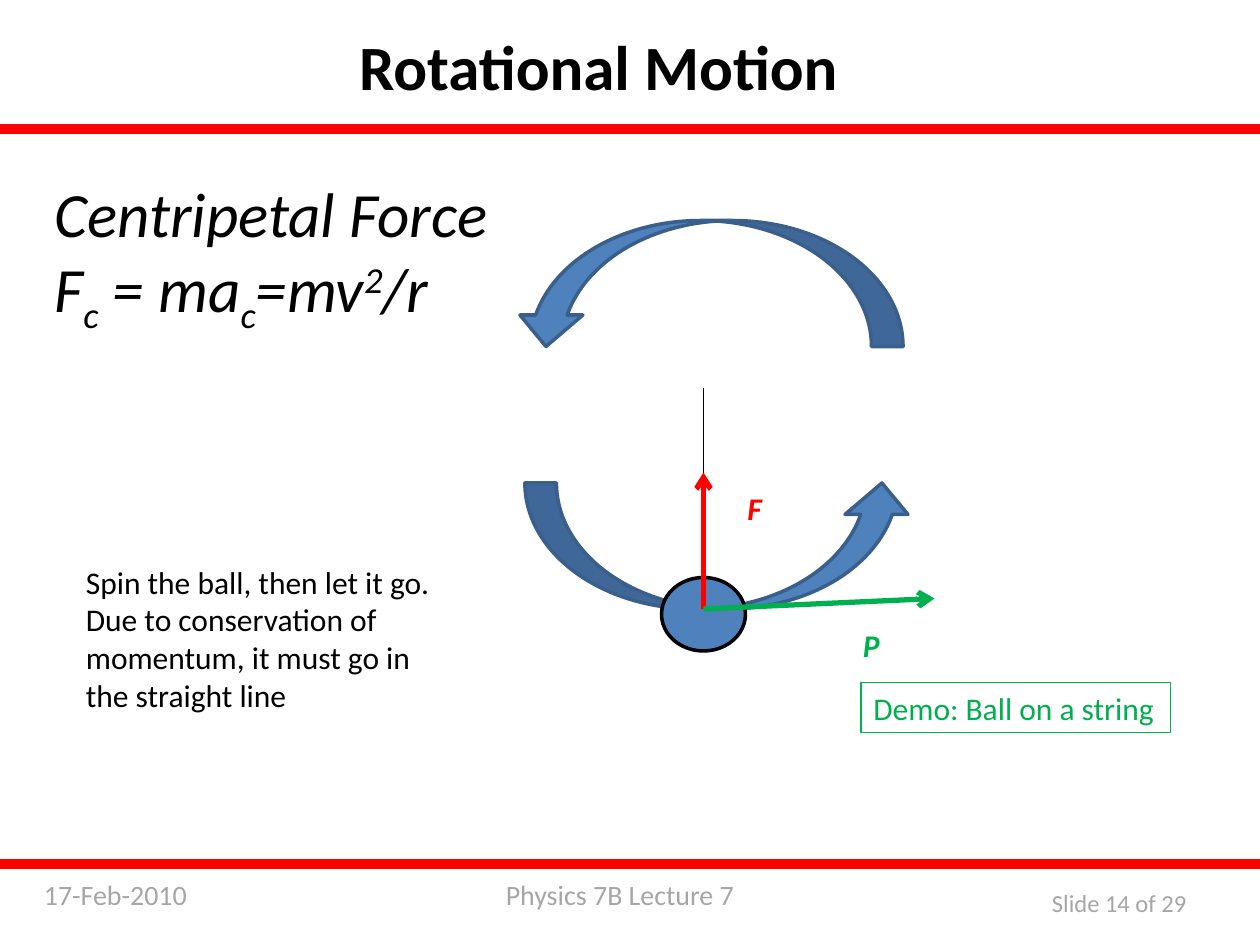
from lxml.etree import SubElement
from pptx import Presentation
from pptx.dml.color import RGBColor
from pptx.enum.shapes import MSO_CONNECTOR as Link, MSO_SHAPE as Shape
from pptx.enum.text import MSO_ANCHOR as Anchor, MSO_AUTO_SIZE as Fit, PP_ALIGN as Align
from pptx.oxml.ns import qn
from pptx.util import Pt

EMU_PER_PX = 7620
COLORS = {
    "black": "000000",
    "red": "FF0000",
    "green": "00B050",
    "blue": "4F81BD",
    "navy": "3A5F8C",
    "grey": "A6A6A6",
}
SUBSCRIPT, NORMAL, SUPERSCRIPT = -25000, 0, 30000
FORMULA = [
    ("F", NORMAL), ("c", SUBSCRIPT), (" = ma", NORMAL), ("c", SUBSCRIPT),
    ("=mv", NORMAL), ("2", SUPERSCRIPT), ("/r", NORMAL),
]


def px(*lengths):
    return [length * EMU_PER_PX for length in lengths]


def rgb(color):
    return RGBColor.from_string(COLORS[color])


def apply(target, values):
    for name, value in values.items():
        setattr(target, name, value)


def style_line(line, color, width):
    line.color.rgb = rgb(color)
    line.width = Pt(width)


def write(frame, paragraphs, size, color, wrap=False, align=Align.LEFT, **styles):
    apply(frame, {"word_wrap": wrap, "auto_size": Fit.NONE, "vertical_anchor": Anchor.TOP})
    for index, pieces in enumerate(paragraphs):
        paragraph = frame.add_paragraph() if index else frame.paragraphs[0]
        paragraph.alignment = align
        for text, baseline in pieces:
            run = paragraph.add_run()
            run.text = text
            apply(run.font, {"name": "Calibri", "size": Pt(size), **styles})
            run.font.color.rgb = rgb(color)
            if baseline:
                run._r.get_or_add_rPr().set("baseline", str(baseline))


def add_text(slide, box, text, size, color, **styles):
    label = slide.shapes.add_textbox(*px(*box))
    write(label.text_frame, [[(text, NORMAL)]], size, color, **styles)
    return label


def add_title(slide, box, text):
    title = slide.shapes.title
    apply(title, dict(zip(("left", "top", "width", "height"), px(*box))))
    write(title.text_frame, [[(text, NORMAL)]], 36, "black", align=Align.CENTER, bold=True)


def add_figure(slide, kind, box, fill, outline, rotation=0):
    figure = slide.shapes.add_shape(kind, *px(*box))
    figure.shadow.inherit = False
    figure.rotation = rotation
    figure.fill.solid()
    figure.fill.fore_color.rgb = rgb(fill)
    style_line(figure.line, outline, 2)
    return figure


def add_line(slide, ends, color, width, arrow=False):
    connector = slide.shapes.add_connector(Link.STRAIGHT, *px(*ends))
    style_line(connector.line, color, width)
    if arrow:
        SubElement(connector.line._get_or_add_ln(), qn("a:tailEnd"), type="arrow")
    SubElement(connector._element.spPr, qn("a:effectLst"))
    return connector


def add_frame(slide):
    add_text(slide, (470, 830, 245, 44), "Physics 7B Lecture 7", 16, "grey")
    add_text(slide, (30, 830, 200, 44), "17-Feb-2010", 16, "grey", wrap=True)
    add_text(slide, (990, 840, 157, 41), "Slide 14 of 29", 14, "grey")
    for top in (120, 820):
        add_figure(slide, Shape.RECTANGLE, (0, top, 1200, 6), "red", "red")


def add_spinning_ball(slide):
    add_figure(slide, Shape.CURVED_UP_ARROW, (500, 460, 370, 120), "blue", "navy")
    ball = add_figure(slide, Shape.OVAL, (630, 550, 80, 70), "blue", "black")
    string = add_line(slide, (670, 370, 670, 550), "black", 0.75)
    string.end_connect(ball, 0)
    add_figure(slide, Shape.CURVED_UP_ARROW, (490, 210, 370, 120), "blue", "navy", 180)
    vectors = [
        ("F", "red", (670, 450), (700, 460, 38, 48)),
        ("P", "green", (890, 570), (810, 590, 41, 48)),
    ]
    for letter, color, tip, box in vectors:
        add_line(slide, (670, 580, *tip), color, 3, arrow=True)
        add_text(slide, box, letter, 18, color, bold=True, italic=True)


def add_explanations(slide):
    law = slide.shapes.add_textbox(*px(40, 160, 440, 157))
    write(law.text_frame, [[("Centripetal Force", NORMAL)], FORMULA], 36, "black", italic=True)
    add_text(
        slide, (70, 530, 370, 157),
        "Spin the ball, then let it go. Due to conservation of momentum, "
        "it must go in the straight line",
        18, "black", wrap=True,
    )
    demo = add_text(slide, (820, 650, 295, 48), "Demo: Ball on a string", 18, "green")
    style_line(demo.line, "green", 0.75)


def main():
    deck = Presentation()
    deck.slide_width, deck.slide_height = px(1200, 900)
    slide = deck.slides.add_slide(deck.slide_layouts[5])
    add_frame(slide)
    add_title(slide, (320, 20, 500, 85), "Rotational Motion")
    add_spinning_ball(slide)
    add_explanations(slide)
    deck.save("out.pptx")


if __name__ == "__main__":
    main()
